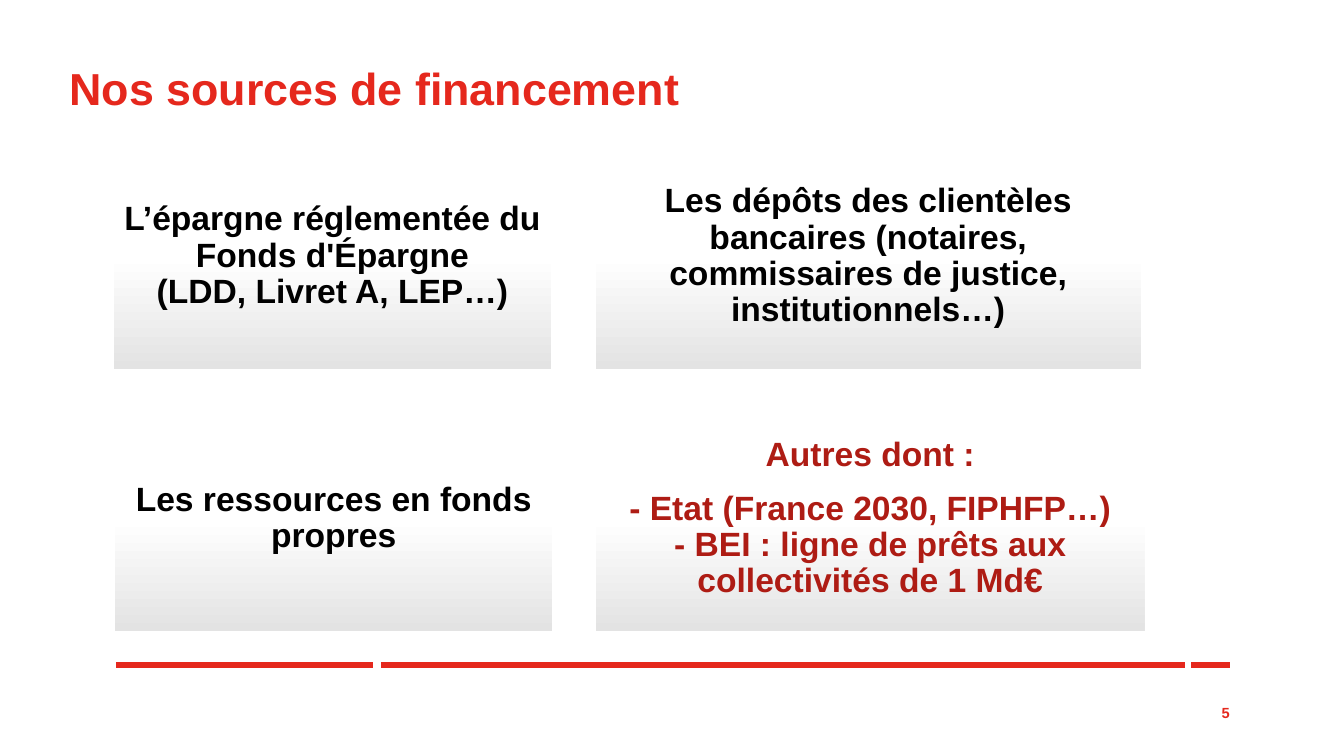
from copy import deepcopy

from pptx import Presentation
from pptx.dml.color import RGBColor
from pptx.enum.shapes import MSO_CONNECTOR, MSO_SHAPE
from pptx.enum.text import MSO_ANCHOR, PP_ALIGN
from pptx.oxml.ns import qn
from pptx.util import Cm, Pt
from lxml import etree

RED = RGBColor(0xE5, 0x28, 0x1D)
DARK_RED = RGBColor(0xAE, 0x1C, 0x14)
BLACK = RGBColor(0, 0, 0)
WHITE = RGBColor(0xFF, 0xFF, 0xFF)
GREY = RGBColor(0xE3, 0xE3, 0xE3)
FONT = "Arial"

TITLE = "Nos sources de financement"
PAGE = "5"

# Each paragraph: text, line spacing, space after in points
SOURCES = [
    # left, top, width (cm), colour, paragraphs
    (2.87, 3.63, 11.02, BLACK,
     [("L’épargne réglementée du Fonds d'Épargne\v(LDD, Livret A, LEP…)", 0.9, 0)]),
    (15.01, 3.63, 13.74, BLACK,
     [("Les dépôts des clientèles bancaires (notaires, commissaires de justice, "
       "institutionnels…)", 0.9, 0)]),
    (2.9, 10.24, 11.02, BLACK,
     [("Les ressources en fonds propres", 0.9, 0)]),
    (15.01, 10.24, 13.84, DARK_RED,
     [("Autres dont :", 0.9, 9.5),
      ("- Etat (France 2030, FIPHFP…)", 1.0, 0),
      ("- BEI : ligne de prêts aux collectivités de 1 Md€", 0.9, 0)]),
]
BOX_HEIGHT = 5.66

RULE_Y = 16.76
RULES = [(2.92, 9.4), (9.6, 29.87), (30.02, 30.99)]


def write(shape, paragraphs, size, color, align, anchor, inset_x, inset_y):
    tf = shape.text_frame
    tf.word_wrap = True
    tf.vertical_anchor = anchor
    tf.margin_left = tf.margin_right = Cm(inset_x)
    tf.margin_top = tf.margin_bottom = Cm(inset_y)
    for i, (text, spacing, after) in enumerate(paragraphs):
        p = tf.add_paragraph() if i else tf.paragraphs[0]
        p.alignment = align
        p.line_spacing = spacing
        p.space_after = Pt(after)
        for j, line in enumerate(text.split("\v")):
            if j:
                p.add_line_break()
            r = p.add_run()
            r.text = line
            r.font.name = FONT
            r.font.size = Pt(size)
            r.font.bold = True
            r.font.color.rgb = color


def fade_to_grey(shape):
    """White down to the middle, then fading to grey at the bottom."""
    fill = shape.fill
    fill.gradient()
    fill.gradient_angle = 270
    stops = shape.element.spPr.find(qn("a:gradFill")).find(qn("a:gsLst"))
    stops.insert(1, deepcopy(stops[0]))
    for stop, position, color in zip(fill.gradient_stops, (0, 0.5, 1), (WHITE, WHITE, GREY)):
        stop.position = position
        stop.color.rgb = color


def add_rule(s, left, right):
    rule = s.shapes.add_connector(
        MSO_CONNECTOR.STRAIGHT, Cm(left), Cm(RULE_Y), Cm(right), Cm(RULE_Y))
    rule.line.color.rgb = RED
    rule.line.width = Pt(4)
    etree.SubElement(rule.element.spPr, qn("a:effectLst"))


def add_source(s, left, top, width, color, paragraphs):
    box = s.shapes.add_shape(
        MSO_SHAPE.RECTANGLE, Cm(left), Cm(top), Cm(width), Cm(BOX_HEIGHT))
    box.shadow.inherit = False
    box.line.fill.background()
    fade_to_grey(box)
    write(box, paragraphs, 24, color, PP_ALIGN.CENTER, MSO_ANCHOR.MIDDLE, 0.25, 0.25)


def main():
    prs = Presentation()
    prs.slide_width, prs.slide_height = Cm(33.87), Cm(19.05)
    s = prs.slides.add_slide(prs.slide_layouts[6])

    for left, right in RULES:
        add_rule(s, left, right)

    title = s.shapes.add_textbox(Cm(1.5), Cm(1.45), Cm(30.3), Cm(1.24))
    write(title, [(TITLE, 0.9, 0)], 32, RED, PP_ALIGN.LEFT, MSO_ANCHOR.TOP, 0.25, 0.23)

    for source in SOURCES:
        add_source(s, *source)

    page = s.shapes.add_textbox(Cm(29.87), Cm(17.73), Cm(1.37), Cm(0.48))
    write(page, [(PAGE, 1.0, 0)], 10.5, RED, PP_ALIGN.RIGHT, MSO_ANCHOR.MIDDLE, 0.25, 0)

    prs.save("out.pptx")


if __name__ == "__main__":
    main()
